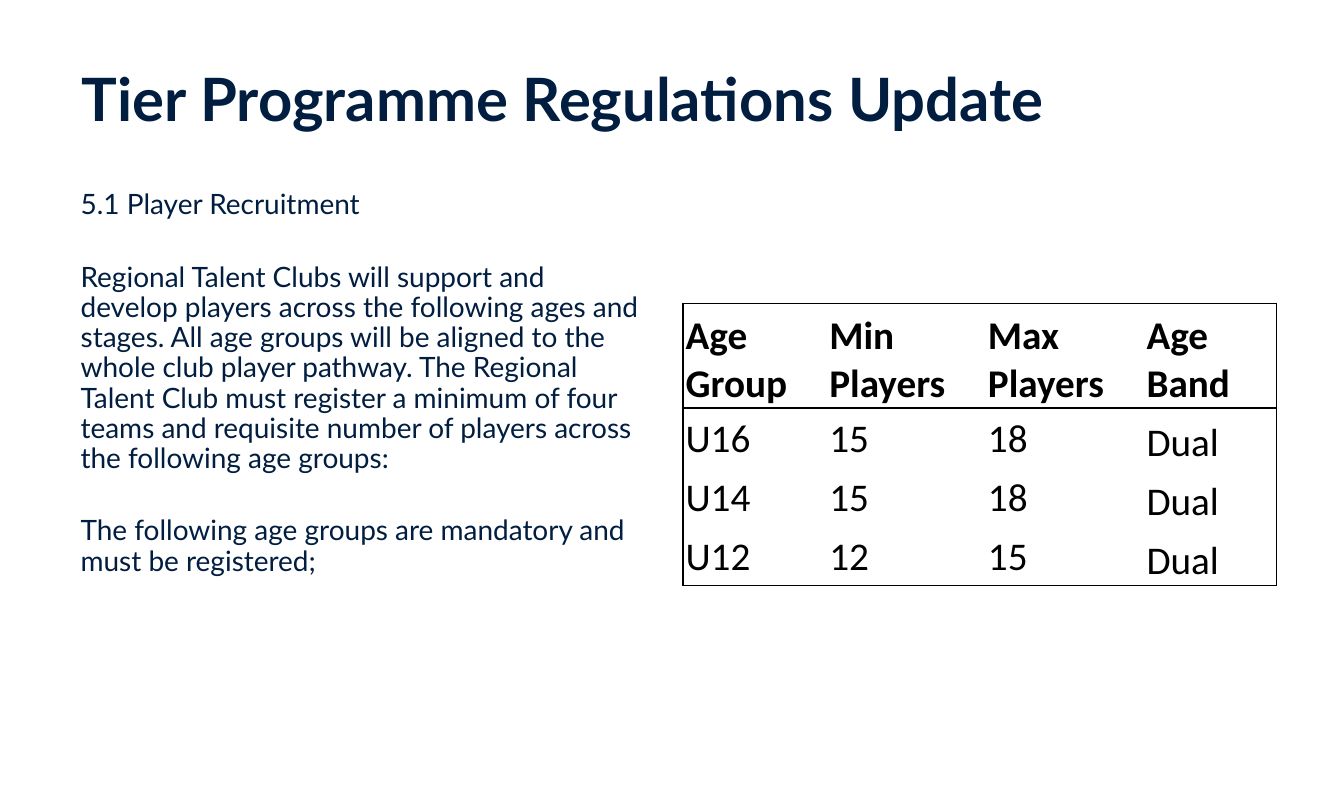
import pptx
import pptx.util
import pptx.dml.color
import pptx.enum.text
import pptx.oxml
import pptx.oxml.ns
import lxml.etree

Pt = pptx.util.Pt
ANCHOR = pptx.enum.text.MSO_ANCHOR
NAVY = "011E41"
BLACK = "000000"

TITLE = "Tier Programme Regulations Update"
BODY = [
    "5.1 Player Recruitment",
    "Regional Talent Clubs will support and develop players across the "
    "following ages and stages. All age groups will be aligned to the whole "
    "club player pathway. The Regional Talent Club must register a minimum "
    "of four teams and requisite number of players across the following age "
    "groups:",
    "The following age groups are mandatory and must be registered;",
]
ROWS = [
    ["Age Group", "Min Players", "Max Players", "Age Band"],
    ["U16", "15", "18", "Dual"],
    ["U14", "15", "18", "Dual"],
    ["U12", "12", "15", "Dual"],
]
WIDTHS = [77, 85, 85, 71]
HEIGHTS = [56, 31.7, 31.7, 31.7]


def color(text):
    return pptx.dml.color.RGBColor.from_string(text)


def add_run(para, text, size, face, tint, bold=False):
    run = para.add_run()
    run.text = text
    font = run.font
    font.size = Pt(size)
    font.name = face
    font.bold = bold
    font.color.rgb = color(tint)


def fill_holder(shape, box, lines, size, bold=False, pitch=1.0, gap=0):
    shape.left, shape.top, shape.width, shape.height = map(Pt, box)
    frame = shape.text_frame
    frame.word_wrap = True
    frame.auto_size = pptx.enum.text.MSO_AUTO_SIZE.NONE
    frame.vertical_anchor = ANCHOR.TOP
    for index, line in enumerate(lines):
        para = frame.add_paragraph() if index else frame.paragraphs[0]
        props = para._p.get_or_add_pPr()
        props.set("marL", "0")
        props.set("indent", "0")
        lxml.etree.SubElement(props, pptx.oxml.ns.qn("a:buNone"))
        para.alignment = pptx.enum.text.PP_ALIGN.LEFT
        para.line_spacing = pitch
        para.space_before = Pt(gap if index else 0)
        add_run(para, line, size, "Lato", NAVY, bold)


def set_edges(cell, shown):
    props = cell._tc.get_or_add_tcPr()
    for side in "LRTB":
        paint = "<a:noFill/>"
        if side in shown:
            paint = f'<a:solidFill><a:srgbClr val="{BLACK}"/></a:solidFill>'
        props.append(pptx.oxml.parse_xml(
            f'<a:ln{side} {pptx.oxml.ns.nsdecls("a")} w="{Pt(1)}">'
            f"{paint}</a:ln{side}>"))


def fill_cell(cell, text, edges, bold, anchor):
    cell.margin_left = cell.margin_right = cell.margin_top = Pt(1.5)
    cell.margin_bottom = 0
    cell.vertical_anchor = anchor
    set_edges(cell, edges)
    cell.fill.background()
    add_run(cell.text_frame.paragraphs[0], text, 21, "Calibri", BLACK, bold)


def add_grid(slide, left, top):
    frame = slide.shapes.add_table(
        len(ROWS), len(WIDTHS), Pt(left), Pt(top),
        Pt(sum(WIDTHS)), Pt(sum(HEIGHTS)))
    table = frame.table
    table.first_row = table.horz_banding = False
    for column, width in zip(table.columns, WIDTHS):
        column.width = Pt(width)
    for row, height in zip(table.rows, HEIGHTS):
        row.height = Pt(height)
    last_row, last_col = len(ROWS) - 1, len(WIDTHS) - 1
    for r, texts in enumerate(ROWS):
        for c, text in enumerate(texts):
            edges = "T" if r < 2 else ""
            edges += "B" if r in (0, last_row) else ""
            edges += "L" if c == 0 else ""
            edges += "R" if c == last_col else ""
            low = r == 0 or c == last_col
            fill_cell(table.cell(r, c), text, edges, r == 0,
                      ANCHOR.BOTTOM if low else ANCHOR.MIDDLE)


def main():
    deck = pptx.Presentation()
    deck.slide_width, deck.slide_height = Pt(720), Pt(422.6)
    slide = deck.slides.add_slide(deck.slide_layouts[1])
    fill_holder(slide.shapes.title, (36.7, 29.5, 646.6, 67.7), [TITLE], 32,
                bold=True)
    fill_holder(slide.placeholders[1], (36, 98.6, 318.2, 278.6), BODY, 15,
                pitch=0.9, gap=22.4)
    add_grid(slide, 365.8, 162.5)
    deck.save("out.pptx")


if __name__ == "__main__":
    main()
